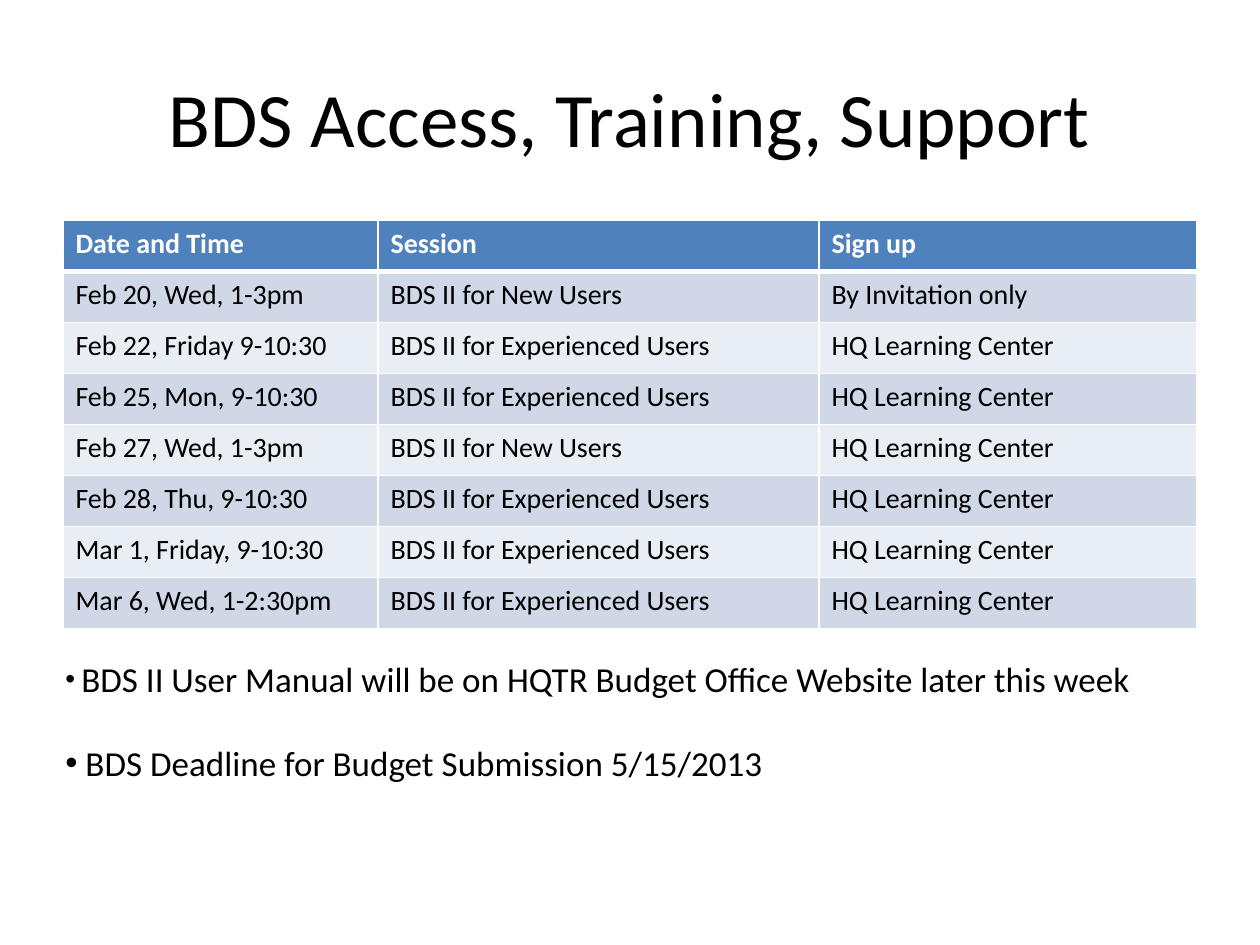
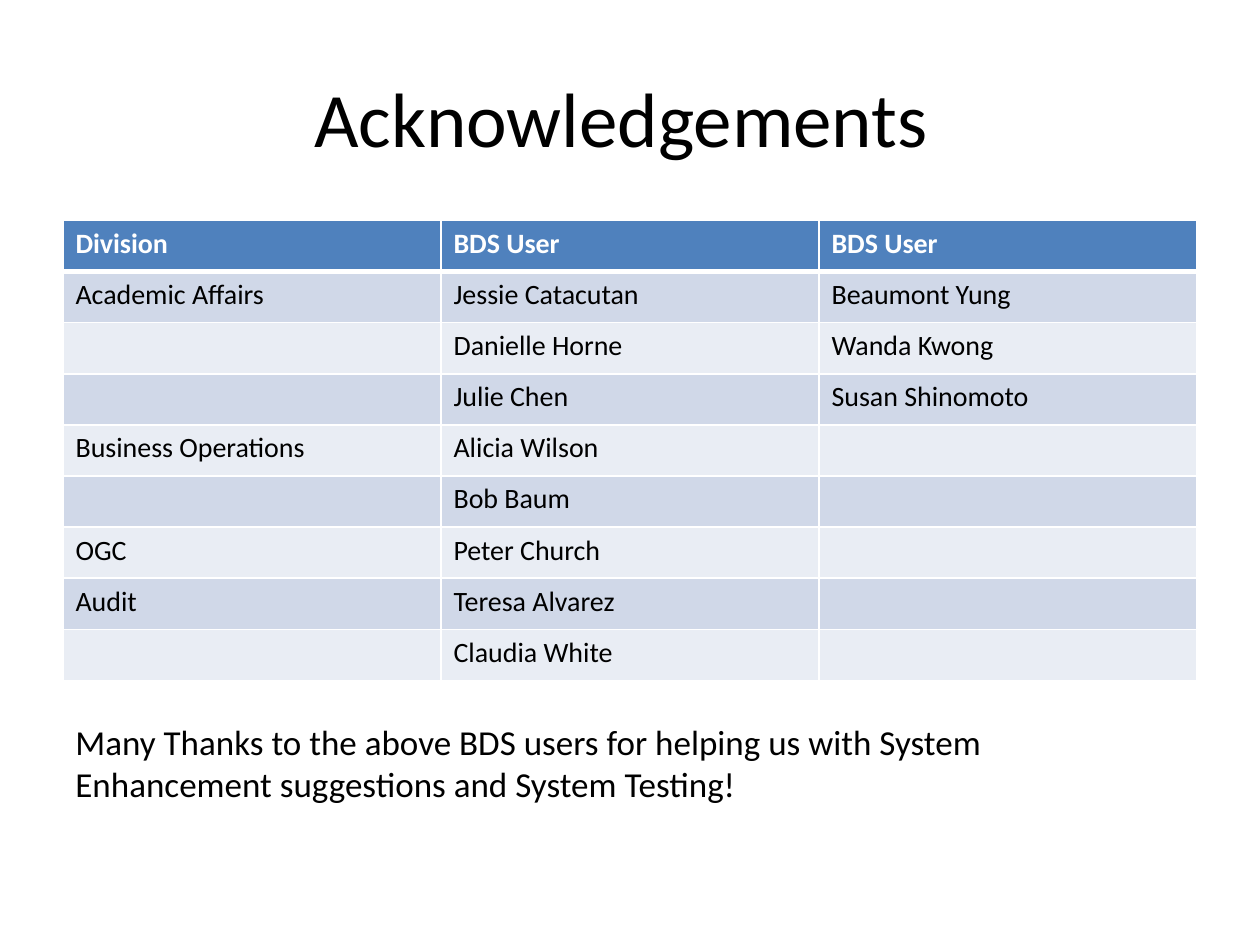
from lxml.etree import SubElement
from pptx import Presentation
from pptx.dml.color import RGBColor
from pptx.enum.text import MSO_ANCHOR, PP_ALIGN
from pptx.oxml.ns import qn
from pptx.util import Inches, Pt

# Content
TRAINING = {
    "title": "BDS Access, Training, Support",
    "columns": [2.5, 3.5, 3],
    "table_height": 3.24,
    "rows": [
        ("Date and Time", "Session", "Sign up"),
        ("Feb 20, Wed, 1-3pm", "BDS II for New Users", "By Invitation only"),
        ("Feb 22, Friday 9-10:30", "BDS II for Experienced Users", "HQ Learning Center"),
        ("Feb 25, Mon, 9-10:30", "BDS II for Experienced Users", "HQ Learning Center"),
        ("Feb 27, Wed, 1-3pm", "BDS II for New Users", "HQ Learning Center"),
        ("Feb 28, Thu, 9-10:30", "BDS II for Experienced Users", "HQ Learning Center"),
        ("Mar 1, Friday, 9-10:30", "BDS II for Experienced Users", "HQ Learning Center"),
        ("Mar 6, Wed, 1-2:30pm", "BDS II for Experienced Users", "HQ Learning Center"),
    ],
    "note_place": (0.42, 5.17, 9.08, 1.38),
    "bulleted": True,
    # Each note is a list of (text, size) runs
    "notes": [
        [(" ", 16),
         ("BDS II User Manual will be on HQTR Budget Office Website later this week", 20)],
        [(" BDS Deadline for Budget Submission 5/15/2013", 20)],
    ],
}
THANKS = {
    "title": "Acknowledgements ",
    "columns": [3, 3, 3],
    "table_height": 3.65,
    "rows": [
        ("Division", "BDS User", "BDS User"),
        ("Academic Affairs", "Jessie Catacutan", "Beaumont Yung"),
        ("", "Danielle Horne", "Wanda Kwong"),
        ("", "Julie Chen", "Susan Shinomoto"),
        ("Business Operations", "Alicia Wilson", ""),
        ("", "Bob Baum", ""),
        ("OGC", "Peter Church", ""),
        ("Audit", "Teresa Alvarez", ""),
        ("", "Claudia White", ""),
    ],
    "note_place": (0.5, 5.67, 9, 0.77),
    "bulleted": False,
    "notes": [
        [("Many Thanks to the above BDS users for helping us with System "
          "Enhancement suggestions and System Testing!", 20)],
    ],
}

# Shared style
FONT = "Calibri"
BLACK, WHITE = "000000", "FFFFFF"
HEADER_FILL = "4F81BD"
BAND_FILLS = ["E9EDF4", "D0D8E8"]
TITLE_PLACE = (0.5, 0.3, 9, 1.25)
TABLE_LEFT, TABLE_TOP = 0.5, 1.75
THIN, THICK = 1, 3


def color(value):
    return RGBColor.from_string(value)


def add_span(para, text, size, shade=BLACK, bold=False):
    span = para.add_run()
    span.text = text
    span.font.name = FONT
    span.font.size = Pt(size)
    span.font.bold = bold
    span.font.color.rgb = color(shade)


def add_box(page, place):
    box = page.shapes.add_textbox(*(Inches(length) for length in place))
    box.text_frame.word_wrap = True
    return box.text_frame


def add_title(page, text):
    frame = add_box(page, TITLE_PLACE)
    frame.vertical_anchor = MSO_ANCHOR.MIDDLE
    para = frame.paragraphs[0]
    para.alignment = PP_ALIGN.CENTER
    add_span(para, text, 44)


def set_borders(cell, top, bottom):
    properties = cell._tc.get_or_add_tcPr()
    for side, width in (("L", THIN), ("R", THIN), ("T", top), ("B", bottom)):
        line = SubElement(properties, qn(f"a:ln{side}"), w=str(Pt(width)))
        fill = SubElement(line, qn("a:solidFill"))
        SubElement(fill, qn("a:srgbClr"), val=WHITE)


def add_table(page, rows, columns, height):
    table = page.shapes.add_table(
        len(rows), len(columns), Inches(TABLE_LEFT), Inches(TABLE_TOP),
        Inches(sum(columns)), Inches(height)).table
    for column, width in zip(table.columns, columns):
        column.width = Inches(width)
    for index, texts in enumerate(rows):
        table.rows[index].height = Inches(height / len(rows))
        header = index == 0
        for cell, text in zip(table.rows[index].cells, texts):
            # The thick rule lies between the header and the first row
            set_borders(cell, THICK if index == 1 else THIN, THICK if header else THIN)
            cell.fill.solid()
            cell.fill.fore_color.rgb = color(HEADER_FILL if header else BAND_FILLS[index % 2])
            if text:
                add_span(cell.text_frame.paragraphs[0], text, 16,
                         WHITE if header else BLACK, header)


def add_bullet(para):
    properties = para._p.get_or_add_pPr()
    properties.set("marL", "0")
    properties.set("indent", "0")
    SubElement(properties, qn("a:buFont"), typeface="Arial")
    SubElement(properties, qn("a:buChar"), char="•")


def add_notes(page, notes, place, bulleted):
    frame = add_box(page, place)
    for index, spans in enumerate(notes):
        para = frame.add_paragraph() if index else frame.paragraphs[0]
        if index:
            para.space_before = Pt(24)
        if bulleted:
            add_bullet(para)
        for text, size in spans:
            add_span(para, text, size)


def main():
    deck = Presentation()
    deck.slide_width, deck.slide_height = Inches(10), Inches(7.5)
    for content in (TRAINING, THANKS):
        page = deck.slides.add_slide(deck.slide_layouts[6])
        add_title(page, content["title"])
        add_table(page, content["rows"], content["columns"], content["table_height"])
        add_notes(page, content["notes"], content["note_place"], content["bulleted"])
    deck.save("out.pptx")


if __name__ == "__main__":
    main()
